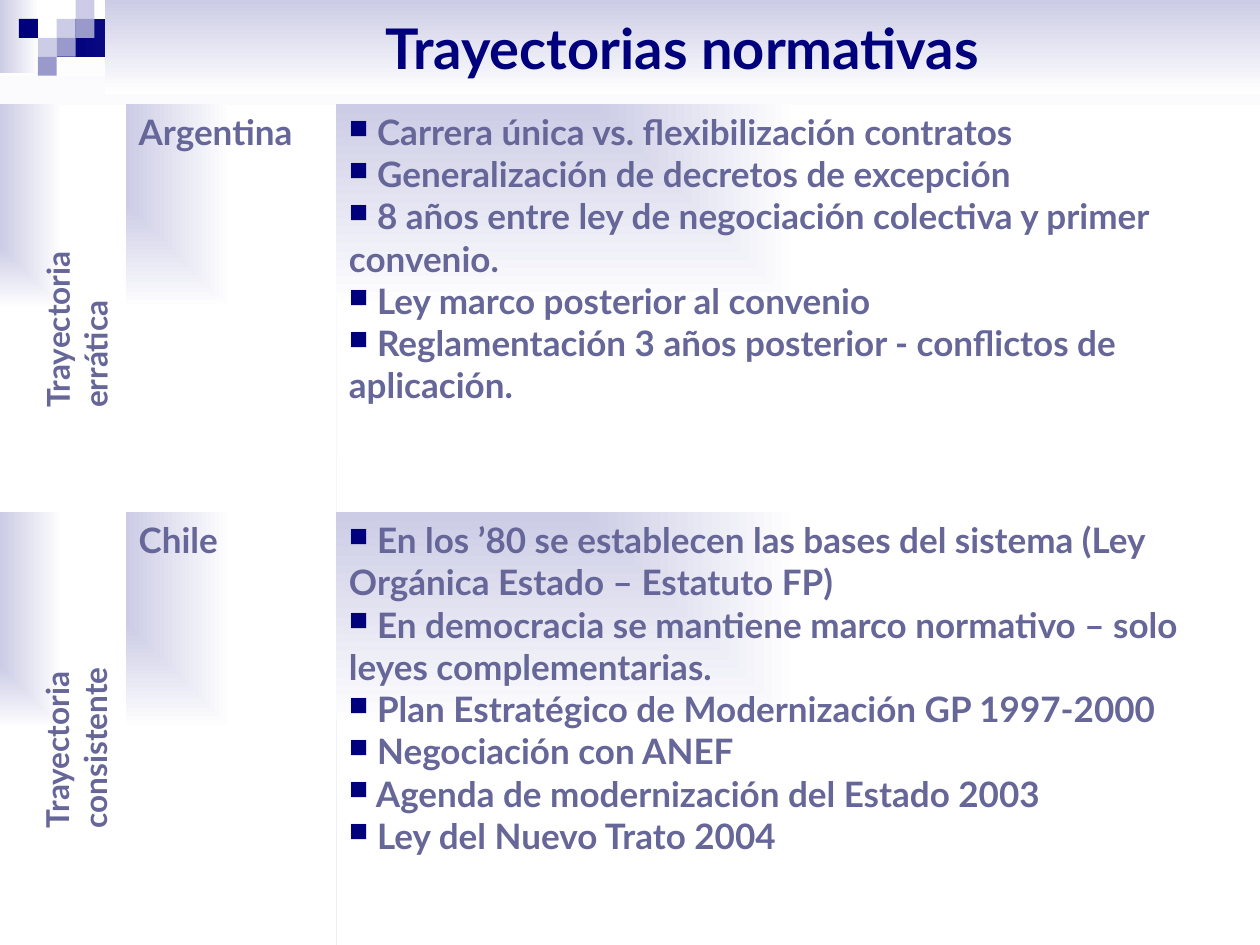
from lxml.etree import SubElement
from pptx import Presentation
from pptx.dml.color import RGBColor
from pptx.enum.shapes import MSO_SHAPE
from pptx.enum.text import MSO_ANCHOR, PP_ALIGN
from pptx.oxml.ns import qn
from pptx.util import Pt

PX = 9144
NAVY = RGBColor(0x00, 0x00, 0x7D)
SLATE = RGBColor(0x66, 0x66, 0x99)
LAVENDER = RGBColor(0xCC, 0xCC, 0xE6)
PERIWINKLE = RGBColor(0x99, 0x99, 0xCC)
WHITE = RGBColor(0xFF, 0xFF, 0xFF)
FONT = "Lato"
NO_TABLE_STYLE = "{2D5ABB26-0587-4C30-8999-92F81FD0307C}"
RIGHTWARD, DOWNWARD = 0, 270

ARGENTINA = [
    "Carrera única vs. flexibilización contratos",
    "Generalización de decretos de excepción",
    "8 años entre ley de negociación colectiva y primer convenio.",
    "Ley marco posterior al convenio",
    "Reglamentación 3 años posterior - conflictos de aplicación.",
]
CHILE = [
    "En los ’80 se establecen las bases del sistema (Ley Orgánica Estado – Estatuto FP)",
    "En democracia se mantiene marco normativo – solo leyes complementarias.",
    "Plan Estratégico de Modernización GP 1997-2000",
    "Negociación con ANEF",
    "Agenda de modernización del Estado 2003",
    "Ley del Nuevo Trato 2004",
]


def emu(*lengths):
    """Turn px lengths into EMU."""
    return [length * PX for length in lengths]


def fill_gradient(fill, start, end, angle):
    """Give a fill a two-colour linear gradient."""
    fill.gradient()
    fill.gradient_angle = angle
    for stop, color in zip(fill.gradient_stops, (start, end)):
        stop.color.rgb = color


def fill_from_corner(cell):
    """Fade a cell from lavender at its top left corner to white."""
    fill_gradient(cell.fill, LAVENDER, WHITE, RIGHTWARD)
    gradient = cell._tc.tcPr.find(qn("a:gradFill"))
    gradient.remove(gradient.find(qn("a:lin")))
    rays = SubElement(gradient, qn("a:path"), path="rect")
    SubElement(rays, qn("a:fillToRect"), r="100000", b="100000")


def write_text(paragraph, text, size=20, color=SLATE, align=PP_ALIGN.LEFT, bullet=False):
    """Write one bold paragraph, with a square bullet if asked."""
    paragraph.alignment = align
    run = paragraph.add_run()
    run.text = f" {text}" if bullet else text
    run.font.name, run.font.size, run.font.bold = FONT, Pt(size), True
    run.font.color.rgb = color
    if bullet:
        properties = paragraph._p.get_or_add_pPr()
        properties.set("marL", "0")
        properties.set("indent", "0")
        bullet_color = SubElement(properties, qn("a:buClr"))
        SubElement(bullet_color, qn("a:srgbClr"), val=str(NAVY))
        SubElement(properties, qn("a:buSzPct"), val="75000")
        SubElement(properties, qn("a:buChar"), char="■")


def add_block(slide, left, top, width, height):
    """Add a rectangle without line or shadow."""
    block = slide.shapes.add_shape(MSO_SHAPE.RECTANGLE, *emu(left, top, width, height))
    block.shadow.inherit = False
    block.line.fill.background()
    return block


def add_mosaic(slide, left, top, width):
    """Place the corner mosaic and its band."""
    fade = add_block(slide, left, top, 31, 58)
    fill_gradient(fade.fill, LAVENDER, WHITE, RIGHTWARD)
    band = add_block(slide, left + 45, top + 15, width - 45, 30)
    fill_gradient(band.fill, NAVY, WHITE, RIGHTWARD)
    side = 15
    tiles = [
        (3, 1, LAVENDER), (4, 0, LAVENDER), (4, 1, PERIWINKLE), (2, 2, LAVENDER),
        (1, 1, NAVY), (3, 2, PERIWINKLE), (2, 3, PERIWINKLE),
    ]
    for column, row, color in tiles:
        tile = add_block(slide, left + column * side, top + row * side, side, side)
        tile.fill.solid()
        tile.fill.fore_color.rgb = color


def add_title(slide, left, top, width, height):
    """Place the title bar."""
    title = add_block(slide, left, top, width, height)
    fill_gradient(title.fill, LAVENDER, WHITE, DOWNWARD)
    title.text_frame.vertical_anchor = MSO_ANCHOR.MIDDLE
    write_text(title.text_frame.paragraphs[0], "Trayectorias normativas",
               size=32, color=NAVY, align=PP_ALIGN.CENTER)


def add_country_table(slide, left, top, width, height):
    """Place the table of countries and their norms."""
    countries = [("Argentina", ARGENTINA), ("Chile", CHILE)]
    frame = slide.shapes.add_table(len(countries), 3, *emu(left, top, width, height))
    table = frame.table
    table.first_row = table.horz_banding = False
    table._tbl.tblPr.find(qn("a:tableStyleId")).text = NO_TABLE_STYLE
    for column, column_width in zip(table.columns, emu(100, 167, width - 267)):
        column.width = column_width
    for row, row_height in zip(table.rows, emu(324, height - 324)):
        row.height = row_height
    for row, (country, norms) in zip(table.rows, countries):
        for cell in row.cells:
            fill_from_corner(cell)
        write_text(row.cells[1].text_frame.paragraphs[0], country)
        norms_frame = row.cells[2].text_frame
        for index, norm in enumerate(norms):
            paragraph = norms_frame.add_paragraph() if index else norms_frame.paragraphs[0]
            write_text(paragraph, norm, bullet=True)


def add_path_label(slide, text, left, top, width, height):
    """Place a label that reads upwards."""
    label = slide.shapes.add_textbox(*emu(left, top, width, height))
    label.rotation = 270
    label.text_frame.word_wrap = True
    write_text(label.text_frame.paragraphs[0], text, size=18)


def main():
    """Build and save the slide."""
    presentation = Presentation()
    presentation.slide_width, presentation.slide_height = emu(1000, 750)
    slide = presentation.slides.add_slide(presentation.slide_layouts[6])
    fill_gradient(slide.background.fill, WHITE, LAVENDER, DOWNWARD)
    add_mosaic(slide, 0, 0, 1000)
    add_title(slide, 83, 0, 917, 75)
    add_country_table(slide, 0, 83, 1000, 667)
    add_path_label(slide, "Trayectoria errática", -27, 211, 175, 70)
    add_path_label(slide, "Trayectoria consistente", -36, 536, 192, 70)
    presentation.save("out.pptx")


if __name__ == "__main__":
    main()
